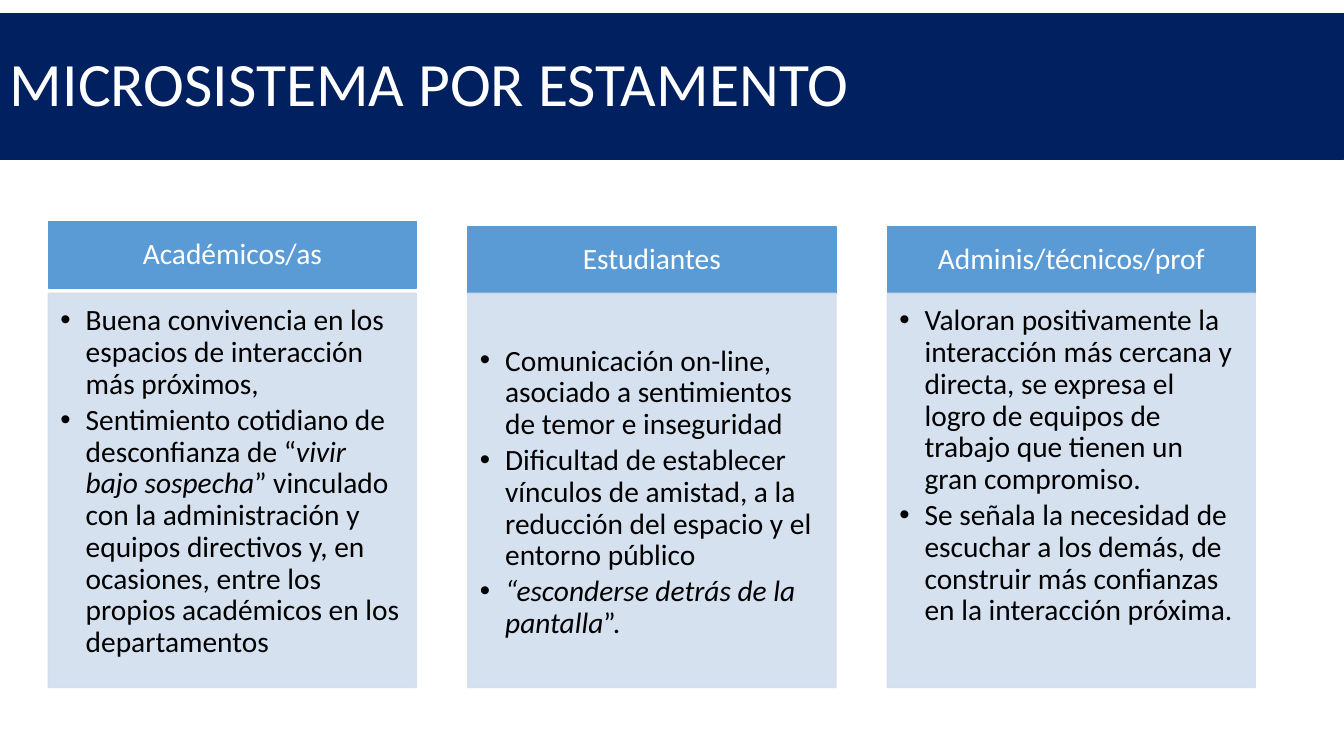
from lxml import etree
from pptx import Presentation
from pptx.dml.color import RGBColor
from pptx.enum.shapes import MSO_SHAPE
from pptx.enum.text import MSO_ANCHOR, PP_ALIGN
from pptx.oxml.ns import qn
from pptx.util import Inches, Pt

TITLE = "MICROSISTEMA POR ESTAMENTO"
COLUMNS = [
    {"heading": "Académicos/as", "raised": 0.05, "lowered": 0, "points": [
        [("Buena convivencia en los espacios de interacción más próximos,", False)],
        [("Sentimiento cotidiano de desconfianza de “", False),
         ("vivir bajo sospecha", True),
         ("” vinculado con la administración y equipos directivos y, en ocasiones, "
          "entre los propios académicos en los departamentos", False)],
    ]},
    {"heading": "Estudiantes", "raised": 0, "lowered": 0.4, "points": [
        [("Comunicación on-line, asociado a sentimientos de temor e inseguridad", False)],
        [("Dificultad de establecer vínculos de amistad, a la reducción del espacio "
          "y el entorno público", False)],
        [("“esconderse detrás de la pantalla", True), ("”.", False)],
    ]},
    {"heading": "Adminis/técnicos/prof", "raised": 0, "lowered": 0, "points": [
        [("Valoran positivamente la interacción más cercana y directa, se expresa el "
          "logro de equipos de trabajo que tienen un gran compromiso.", False)],
        [("Se señala la necesidad de escuchar a los demás, de construir más confianzas "
          "en la interacción próxima.", False)],
    ]},
]

NAVY = RGBColor(0x00, 0x20, 0x60)
BLUE = RGBColor(0x5B, 0x9B, 0xD5)
PALE = RGBColor(0xD2, 0xDE, 0xEF)
WHITE = RGBColor(0xFF, 0xFF, 0xFF)
BLACK = RGBColor(0x00, 0x00, 0x00)
RECTANGLE = MSO_SHAPE.RECTANGLE
TOP, MIDDLE = MSO_ANCHOR.TOP, MSO_ANCHOR.MIDDLE
LEFT, CENTER = PP_ALIGN.LEFT, PP_ALIGN.CENTER

WIDTH, HEIGHT = 13.33, 7.5
FIRST_LEFT, PITCH, COLUMN_WIDTH = 0.48, 4.16, 3.65
HEADING_TOP, HEADING_HEIGHT, BODY_HEIGHT = 2.25, 0.66, 3.91
BODY_TOP = HEADING_TOP + HEADING_HEIGHT
INDENT = 0.25


def add_box(page, place, color, line_width, anchor, insets, opacity=100):
    box = page.shapes.add_shape(RECTANGLE, *map(Inches, place))
    box.shadow.inherit = False
    box.fill.solid()
    box.fill.fore_color.rgb = color
    box.line.color.rgb = color
    box.line.width = Pt(line_width)
    if opacity < 100:
        for tint in box._element.spPr.iter(qn("a:srgbClr")):
            etree.SubElement(tint, qn("a:alpha"), val=str(opacity * 1000))
    frame = box.text_frame
    frame.word_wrap = True
    frame.vertical_anchor = anchor
    for side, inset in zip(("left", "top", "right", "bottom"), insets):
        setattr(frame, f"margin_{side}", Inches(inset))
    return frame


def write(para, spans, size, color, alignment, space_after=0):
    layout = {"alignment": alignment, "line_spacing": 0.9, "space_after": Pt(space_after)}
    for name, value in layout.items():
        setattr(para, name, value)
    for text, italic in spans:
        span = para.add_run()
        span.text = text
        span.font.color.rgb = color
        for name, value in {"name": "Calibri", "size": Pt(size), "italic": italic}.items():
            setattr(span.font, name, value)


def add_bullet(para):
    properties = para._p.get_or_add_pPr()
    properties.set("marL", str(Inches(INDENT)))
    properties.set("indent", str(-Inches(INDENT)))
    etree.SubElement(properties, qn("a:buFont"), typeface="Arial")
    etree.SubElement(properties, qn("a:buChar"), char="•")


def add_column(page, index, column):
    left = FIRST_LEFT + index * PITCH
    heading_place = (left, HEADING_TOP - column["raised"], COLUMN_WIDTH, HEADING_HEIGHT)
    heading = add_box(page, heading_place, BLUE, 1, MIDDLE, (0.16, 0.09, 0.16, 0.09))
    write(heading.paragraphs[0], [(column["heading"], False)], 21, WHITE, CENTER)
    body_place = (left, BODY_TOP, COLUMN_WIDTH, BODY_HEIGHT)
    insets = (0.12, 0.12 + column["lowered"], 0.16, 0.18)
    body = add_box(page, body_place, PALE, 1, TOP, insets, opacity=90)
    for number, spans in enumerate(column["points"]):
        para = body.add_paragraph() if number else body.paragraphs[0]
        write(para, spans, 21, BLACK, LEFT, space_after=3)
        add_bullet(para)


def main():
    deck = Presentation()
    deck.slide_width, deck.slide_height = Inches(WIDTH), Inches(HEIGHT)
    page = deck.slides.add_slide(deck.slide_layouts[6])
    for index, column in enumerate(COLUMNS):
        add_column(page, index, column)
    banner = add_box(page, (0, 0.13, WIDTH, 1.45), NAVY, 0.75, MIDDLE, (0.1, 0.05, 0.1, 0.05))
    write(banner.paragraphs[0], [(TITLE, False)], 44, WHITE, LEFT)
    deck.save("out.pptx")


if __name__ == "__main__":
    main()
